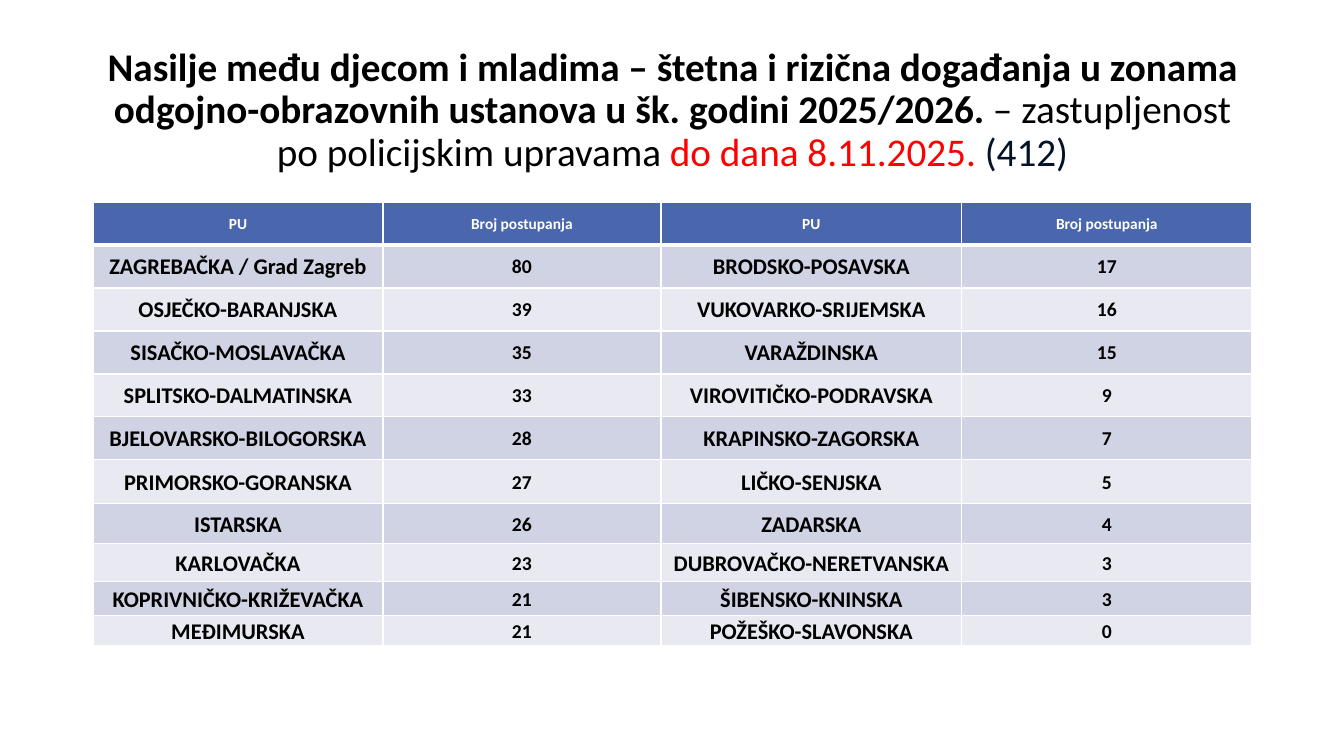
from lxml.etree import SubElement
from pptx import Presentation
from pptx.dml.color import RGBColor
from pptx.enum.text import MSO_VERTICAL_ANCHOR as Anchor, PP_PARAGRAPH_ALIGNMENT as Align
from pptx.oxml.ns import qn
from pptx.util import Pt

PX = 12192000 // 1344
FONT = "Calibri"
COLORS = {
    "black": "000000",
    "white": "FFFFFF",
    "red": "FF0000",
    "navy": "031227",
    "header": "4A66AC",
    "dark_band": "D0D3E3",
    "light_band": "E9EAF1",
}


def style_font(font, size, color, bold):
    font.name = FONT
    font.size = Pt(size)
    font.bold = bold
    font.color.rgb = RGBColor.from_string(COLORS[color])


def add_border(cell, side, width):
    line = SubElement(cell._tc.get_or_add_tcPr(), qn(f"a:ln{side}"), w=str(Pt(width)))
    fill = SubElement(line, qn("a:solidFill"))
    SubElement(fill, qn("a:srgbClr"), val=COLORS["white"])


presentation = Presentation()
presentation.slide_width = 12192000
presentation.slide_height = 6858000
slide = presentation.slides.add_slide(presentation.slide_layouts[6])

title = slide.shapes.add_textbox(93 * PX, 38 * PX, 1159 * PX, 146 * PX)
title_frame = title.text_frame
title_frame.word_wrap = True
title_frame.vertical_anchor = Anchor.MIDDLE
paragraph = title_frame.paragraphs[0]
paragraph.alignment = Align.CENTER
paragraph.line_spacing = 0.9
title_runs = [
    ("Nasilje među djecom i mladima – štetna i rizična događanja u zonama "
     "odgojno-obrazovnih ustanova u šk. godini 2025/2026. ", "black", True),
    ("– zastupljenost po policijskim upravama ", "black", False),
    ("do dana 8.11.2025.", "red", False),
    (" (412)", "navy", False),
]
for text, color, bold in title_runs:
    run = paragraph.add_run()
    run.text = text
    style_font(run.font, 28, color, bold)

rows = [
    ("PU", "Broj postupanja", "PU", "Broj postupanja"),
    ("ZAGREBAČKA / Grad Zagreb", 80, "BRODSKO-POSAVSKA", 17),
    ("OSJEČKO-BARANJSKA", 39, "VUKOVARKO-SRIJEMSKA", 16),
    ("SISAČKO-MOSLAVAČKA", 35, "VARAŽDINSKA", 15),
    ("SPLITSKO-DALMATINSKA", 33, "VIROVITIČKO-PODRAVSKA", 9),
    ("BJELOVARSKO-BILOGORSKA", 28, "KRAPINSKO-ZAGORSKA", 7),
    ("PRIMORSKO-GORANSKA", 27, "LIČKO-SENJSKA", 5),
    ("ISTARSKA", 26, "ZADARSKA", 4),
    ("KARLOVAČKA", 23, "DUBROVAČKO-NERETVANSKA", 3),
    ("KOPRIVNIČKO-KRIŽEVAČKA", 21, "ŠIBENSKO-KNINSKA", 3),
    ("MEĐIMURSKA", 21, "POŽEŠKO-SLAVONSKA", 0),
]
column_widths = [290, 278, 301, 290]
row_heights = [43] * 6 + [44, 40, 38, 34, 30]

table = slide.shapes.add_table(
    len(rows), len(column_widths), 93 * PX, 202 * PX,
    sum(column_widths) * PX, sum(row_heights) * PX,
).table
for column, width in zip(table.columns, column_widths):
    column.width = width * PX
for row, height in zip(table.rows, row_heights):
    row.height = height * PX

for row_index, values in enumerate(rows):
    is_header = row_index == 0
    band = "header" if is_header else "dark_band" if row_index % 2 else "light_band"
    for column_index, value in enumerate(values):
        cell = table.cell(row_index, column_index)
        add_border(cell, "L", 1)
        add_border(cell, "R", 1)
        add_border(cell, "T", 3 if row_index == 1 else 1)
        add_border(cell, "B", 3 if is_header else 1)
        cell.fill.solid()
        cell.fill.fore_color.rgb = RGBColor.from_string(COLORS[band])
        cell.vertical_anchor = Anchor.MIDDLE
        cell.margin_left = cell.margin_right = 7 * PX
        cell.margin_top = cell.margin_bottom = 0
        cell.text = str(value)
        paragraph = cell.text_frame.paragraphs[0]
        paragraph.alignment = Align.CENTER
        paragraph.line_spacing = 1.06
        paragraph.space_after = Pt(8)
        size = 11 if is_header else 14 if column_index % 2 else 16
        style_font(paragraph.font, size, "white" if is_header else "black", True)

presentation.save("out.pptx")
